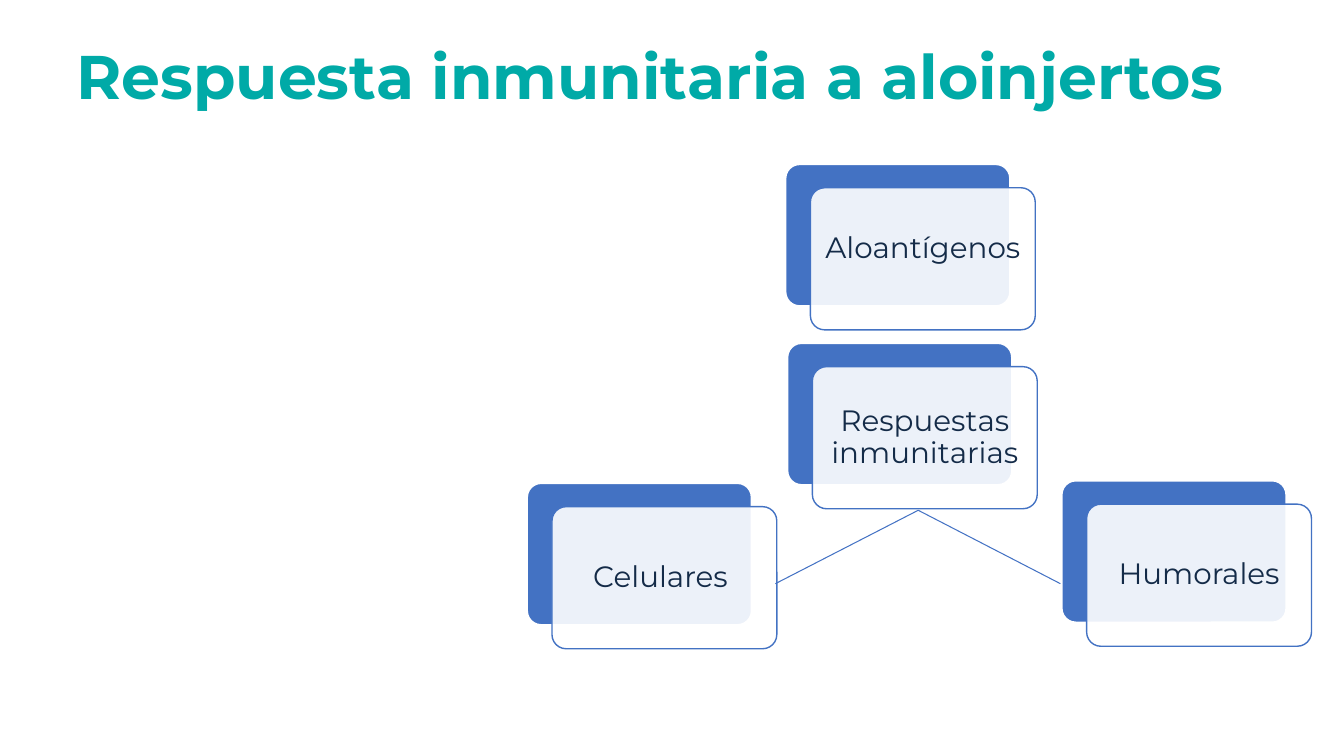
from dataclasses import dataclass

from lxml import etree
from pptx import Presentation
from pptx.dml.color import RGBColor
from pptx.enum.shapes import MSO_CONNECTOR, MSO_SHAPE
from pptx.enum.text import MSO_ANCHOR, PP_ALIGN
from pptx.oxml.ns import qn
from pptx.util import Pt

ROUNDED = MSO_SHAPE.ROUNDED_RECTANGLE
STRAIGHT = MSO_CONNECTOR.STRAIGHT
TOP, MIDDLE = MSO_ANCHOR.TOP, MSO_ANCHOR.MIDDLE
LEFT, CENTER = PP_ALIGN.LEFT, PP_ALIGN.CENTER


@dataclass(frozen=True)
class Theme:
    font: str = "Montserrat"
    title_size: float = 44
    card_size: float = 21
    title: RGBColor = RGBColor(0x00, 0xAA, 0xA7)
    text: RGBColor = RGBColor(0x14, 0x2B, 0x48)
    blue: RGBColor = RGBColor(0x43, 0x72, 0xC3)
    link: RGBColor = RGBColor(0x44, 0x72, 0xC4)
    white: RGBColor = RGBColor(0xFF, 0xFF, 0xFF)


@dataclass(frozen=True)
class Card:
    text: str
    left: float
    top: float
    lift: float = 0  # how far the label sits above the middle


@dataclass(frozen=True)
class Link:
    start: tuple[float, float]
    end: tuple[float, float]


THEME = Theme()
CARD_WIDTH, CARD_HEIGHT = 160.6, 101.5
SHIFT_X, SHIFT_Y = 17.9, 16.9
CARD_INSET = 6.3
HUB = (655.9, 364.5)

CARDS = [
    Card("Aloantígenos", 561, 117.2, lift=7),
    Card("Respuestas inmunitarias", 562.4, 245),
    Card("Celulares ", 376.4, 345),
    Card("Humorales", 758.3, 343.2),
]
LINKS = [Link((553.9, 416.9), HUB), Link(HUB, (757.4, 416.9))]


def write_text(box, text: str, *, size: float, color: RGBColor, bold: bool = False,
               align=LEFT, anchor=MIDDLE, inset_x: float = 7.2,
               inset_top: float = 3.6, inset_bottom: float = 3.6) -> None:
    frame = box.text_frame
    frame.word_wrap = True
    frame.vertical_anchor = anchor
    frame.margin_left = frame.margin_right = Pt(inset_x)
    frame.margin_top, frame.margin_bottom = Pt(inset_top), Pt(inset_bottom)
    para = frame.paragraphs[0]
    para.alignment = align
    para.line_spacing = 0.9
    span = para.add_run()
    span.text = text
    span.font.name = THEME.font
    span.font.size = Pt(size)
    span.font.bold = bold
    span.font.color.rgb = color


def add_panel(page, left: float, top: float, *, fill: RGBColor, line: RGBColor,
              line_width: float, opacity: int = 100):
    panel = page.shapes.add_shape(ROUNDED, Pt(left), Pt(top), Pt(CARD_WIDTH), Pt(CARD_HEIGHT))
    panel.adjustments[0] = 0.1
    panel.shadow.inherit = False
    panel.fill.solid()
    panel.fill.fore_color.rgb = fill
    panel.line.color.rgb = line
    panel.line.width = Pt(line_width)
    if opacity < 100:
        color = panel.fill._xPr.find(qn("a:solidFill"))[0]
        etree.SubElement(color, qn("a:alpha"), val=str(opacity * 1000))
    return panel


def add_card(page, card: Card) -> None:
    add_panel(page, card.left, card.top, fill=THEME.blue, line=THEME.white, line_width=1.5)
    front = add_panel(page, card.left + SHIFT_X, card.top + SHIFT_Y, fill=THEME.white,
                      line=THEME.blue, line_width=1, opacity=90)
    write_text(front, card.text, size=THEME.card_size, color=THEME.text, align=CENTER,
               inset_x=CARD_INSET, inset_top=CARD_INSET,
               inset_bottom=CARD_INSET + 2 * card.lift)


def add_link(page, link: Link) -> None:
    connector = page.shapes.add_connector(
        STRAIGHT, *(Pt(value) for value in link.start + link.end))
    connector.line.color.rgb = THEME.link
    connector.line.width = Pt(0.75)
    etree.SubElement(connector._element.spPr, qn("a:effectLst"))


def main() -> None:
    deck = Presentation()
    deck.slide_width, deck.slide_height = Pt(960), Pt(540)
    page = deck.slides.add_slide(deck.slide_layouts[6])

    # Title
    title = page.shapes.add_textbox(Pt(47.5), Pt(29.5), Pt(865.4), Pt(104.4))
    write_text(title, "Respuesta inmunitaria a aloinjertos", size=THEME.title_size,
               color=THEME.title, bold=True, anchor=TOP)

    # Layered cards
    for card in CARDS:
        add_card(page, card)

    # Branches from the responses to their two kinds
    for link in LINKS:
        add_link(page, link)

    deck.save("out.pptx")


if __name__ == "__main__":
    main()
